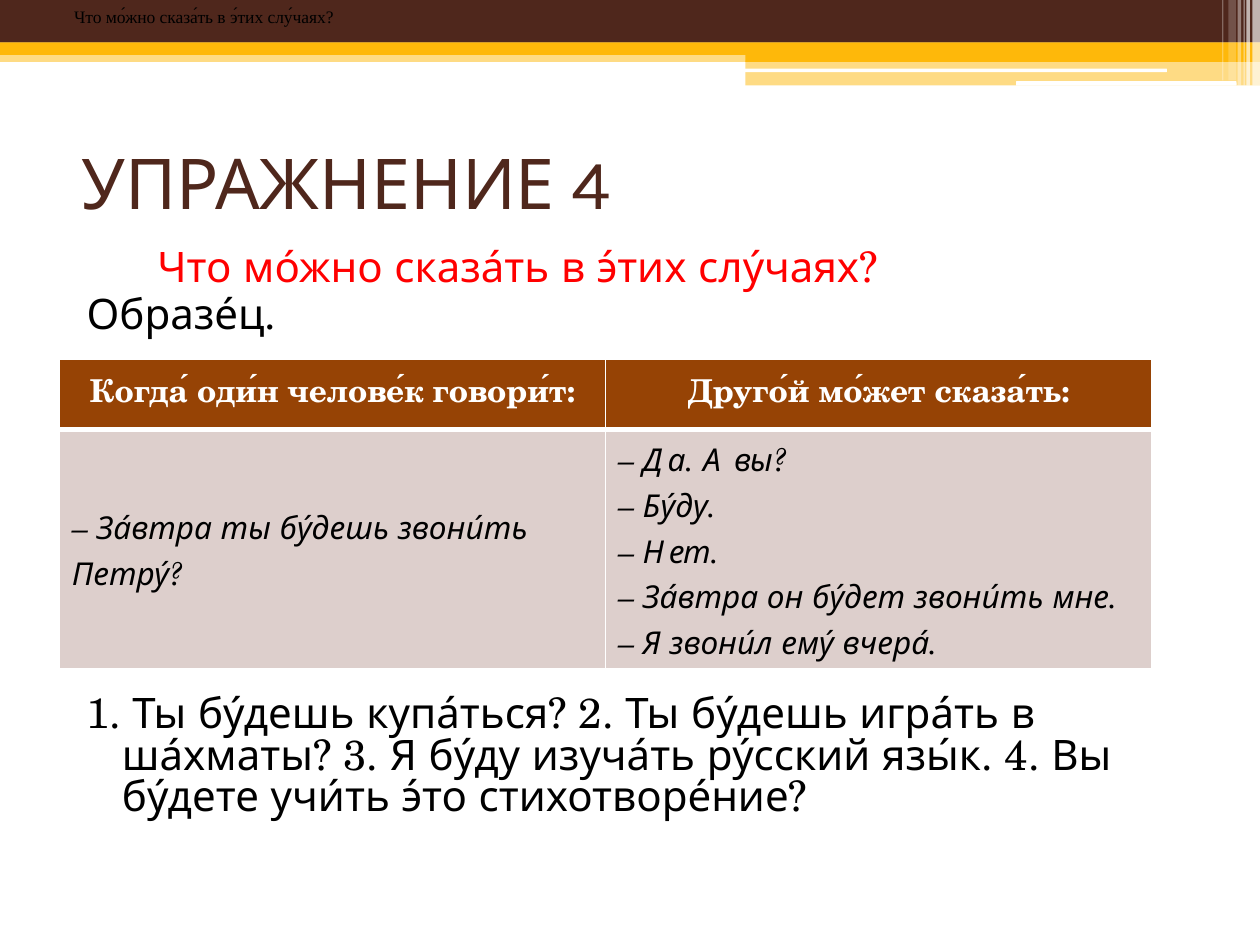
from lxml import etree
from pptx import Presentation
from pptx.dml.color import RGBColor
from pptx.enum import shapes, text
from pptx.oxml import ns
from pptx.util import Pt

BROWN, GOLD, WHITE, BLACK = "4F271C", "FEB80A", "FFFFFF", "000000"
SCHOLA, TIMES, KARLA = "TeX Gyre Schola", "Times New Roman", "Karla"
ACCENT = "́"
QUESTION = "Что мо́жно сказа́ть в э́тих слу́чаях?"


def rgb(value):
    return RGBColor.from_string(value)


def sub(parent, tag, **attributes):
    return etree.SubElement(parent, ns.qn(tag), **attributes)


class Deck:
    def __init__(self, width, height):
        self.prs = Presentation()
        self.prs.slide_width, self.prs.slide_height = Pt(width), Pt(height)
        self.slide = self.prs.slides.add_slide(self.prs.slide_layouts[6])

    def bar(self, left, top, width, height, color, opacity=100, rounded=False):
        kind = shapes.MSO_SHAPE.ROUNDED_RECTANGLE if rounded else shapes.MSO_SHAPE.RECTANGLE
        bar = self.slide.shapes.add_shape(kind, Pt(left), Pt(top), Pt(width), Pt(height))
        bar.shadow.inherit = False
        bar.fill.solid()
        bar.fill.fore_color.rgb = rgb(color)
        bar.line.fill.background()
        if opacity < 100:
            tint = bar.fill._xPr.find(ns.qn("a:solidFill"))[0]
            sub(tint, "a:alpha", val=str(opacity * 1000))

    def run(self, paragraph, words, size, font=SCHOLA, color=BLACK, bold=False, italic=False):
        run = paragraph.add_run()
        run.text = words
        run.font.size, run.font.name = Pt(size), font
        run.font.bold, run.font.italic = bold, italic
        run.font.color.rgb = rgb(color)

    def text(self, left, top, width, height, lines, size, font=SCHOLA,
             anchor=text.MSO_ANCHOR.TOP, spacing=None):
        """Each line is (words, colour, left margin, first-line indent)."""
        box = self.slide.shapes.add_textbox(Pt(left), Pt(top), Pt(width), Pt(height))
        frame = box.text_frame
        frame.word_wrap = True
        frame.vertical_anchor = anchor
        for i, (words, color, margin, indent) in enumerate(lines):
            paragraph = frame.add_paragraph() if i else frame.paragraphs[0]
            properties = paragraph._p.get_or_add_pPr()
            properties.set("marL", str(Pt(margin)))
            properties.set("indent", str(Pt(indent)))
            if spacing:
                paragraph.line_spacing = spacing
            if i:
                paragraph.space_before = Pt(3)
            self.run(paragraph, words, size, font, color)

    def table(self, left, top, widths, heights):
        frame = self.slide.shapes.add_table(len(heights), len(widths), Pt(left), Pt(top),
                                            Pt(sum(widths)), Pt(sum(heights)))
        for column, width in zip(frame.table.columns, widths):
            column.width = Pt(width)
        for row, height in zip(frame.table.rows, heights):
            row.height = Pt(height)
        return frame.table

    def cell(self, cell, fill, top_line=1, bottom_line=1):
        properties = cell._tc.get_or_add_tcPr()
        for side, width in (("L", 1), ("R", 1), ("T", top_line), ("B", bottom_line)):
            line = sub(properties, f"a:ln{side}", w=str(Pt(width)))
            sub(sub(line, "a:solidFill"), "a:srgbClr", val=WHITE)
        cell.fill.solid()
        cell.fill.fore_color.rgb = rgb(fill)

    def header(self, cell, words):
        self.cell(cell, "964305", bottom_line=3)
        paragraph = cell.text_frame.paragraphs[0]
        paragraph.alignment = text.PP_ALIGN.CENTER
        for i, part in enumerate(words.split(ACCENT)):
            if i:
                self.run(paragraph, ACCENT, 18, TIMES, WHITE, bold=True)
            self.run(paragraph, part, 18, SCHOLA, WHITE, bold=True)

    def remarks(self, cell, lines, anchor):
        self.cell(cell, "DDCFCC", top_line=3)
        cell.vertical_anchor = anchor
        for i, words in enumerate(lines):
            frame = cell.text_frame
            paragraph = frame.add_paragraph() if i else frame.paragraphs[0]
            self.run(paragraph, words, 18, italic=True)


def main():
    deck = Deck(720, 540)

    # Top bands
    deck.bar(0, 28.8, 720, 6.6, GOLD, 50)
    deck.bar(0, 0, 720, 24.4, BROWN)
    deck.bar(0, 24.2, 720, 7.2, GOLD)
    deck.bar(426, 28.2, 294, 7.2, GOLD)
    deck.bar(426, 34.6, 294, 14.2, GOLD, 50)
    deck.bar(425.6, 39.2, 241.2, 2, WHITE, rounded=True)
    deck.bar(580.6, 46.4, 126, 2.6, WHITE, rounded=True)

    # Pale stripes in the corner
    for left, width, height, opacity in (
            (715.7, 4.3, 49, 65), (712.2, 2, 49, 65), (710.6, 0.7, 49, 60),
            (707.2, 2, 49, 40), (702, 4.3, 46, 20), (698.4, 0.7, 46, 30)):
        deck.bar(left, 0, width, height, WHITE, opacity)

    # Title
    deck.text(39.6, 50.4, 644.4, 106.6, [("УПРАЖНЕНИЕ 4", BROWN, 0, 0)], 40, KARLA,
              text.MSO_ANCHOR.MIDDLE)

    # Task and exercise
    deck.text(33.8, 138.5, 642.2, 66,
              [(QUESTION, "FF0000", 28.8, 20.2), ("Образе́ц.", BLACK, 28.8, -20.2)],
              24, spacing=0.83)
    deck.text(33.8, 393.5, 642.2, 96,
              [("1. Ты бу́дешь купа́ться? 2. Ты бу́дешь игра́ть в ша́хматы? "
                "3. Я бу́ду изуча́ть ру́сский язы́к. 4. Вы бу́дете учи́ть э́то стихотворе́ние?",
                BLACK, 28.8, -20.2)], 24, spacing=0.83)

    # Small heading over the top band
    deck.text(0, 0, 209.5, 19.4, [(QUESTION, BLACK, 0, 35.3)], 10, TIMES,
              text.MSO_ANCHOR.MIDDLE)

    # Sample dialogue
    dialogue = deck.table(33.9, 205.4, [312.2, 312.2], [40, 137])
    deck.header(dialogue.cell(0, 0), "Когда́ оди́н челове́к говори́т:")
    deck.header(dialogue.cell(0, 1), "Друго́й мо́жет сказа́ть:")
    deck.remarks(dialogue.cell(1, 0), ["– За́втра ты бу́дешь звони́ть Петру́?"],
                 text.MSO_ANCHOR.MIDDLE)
    deck.remarks(dialogue.cell(1, 1),
                 ["– Да. А вы?", "– Бу́ду.", "– Нет.", "– За́втра он бу́дет звони́ть мне.",
                  "– Я звони́л ему́ вчера́."], text.MSO_ANCHOR.TOP)

    deck.prs.save("out.pptx")


if __name__ == "__main__":
    main()
